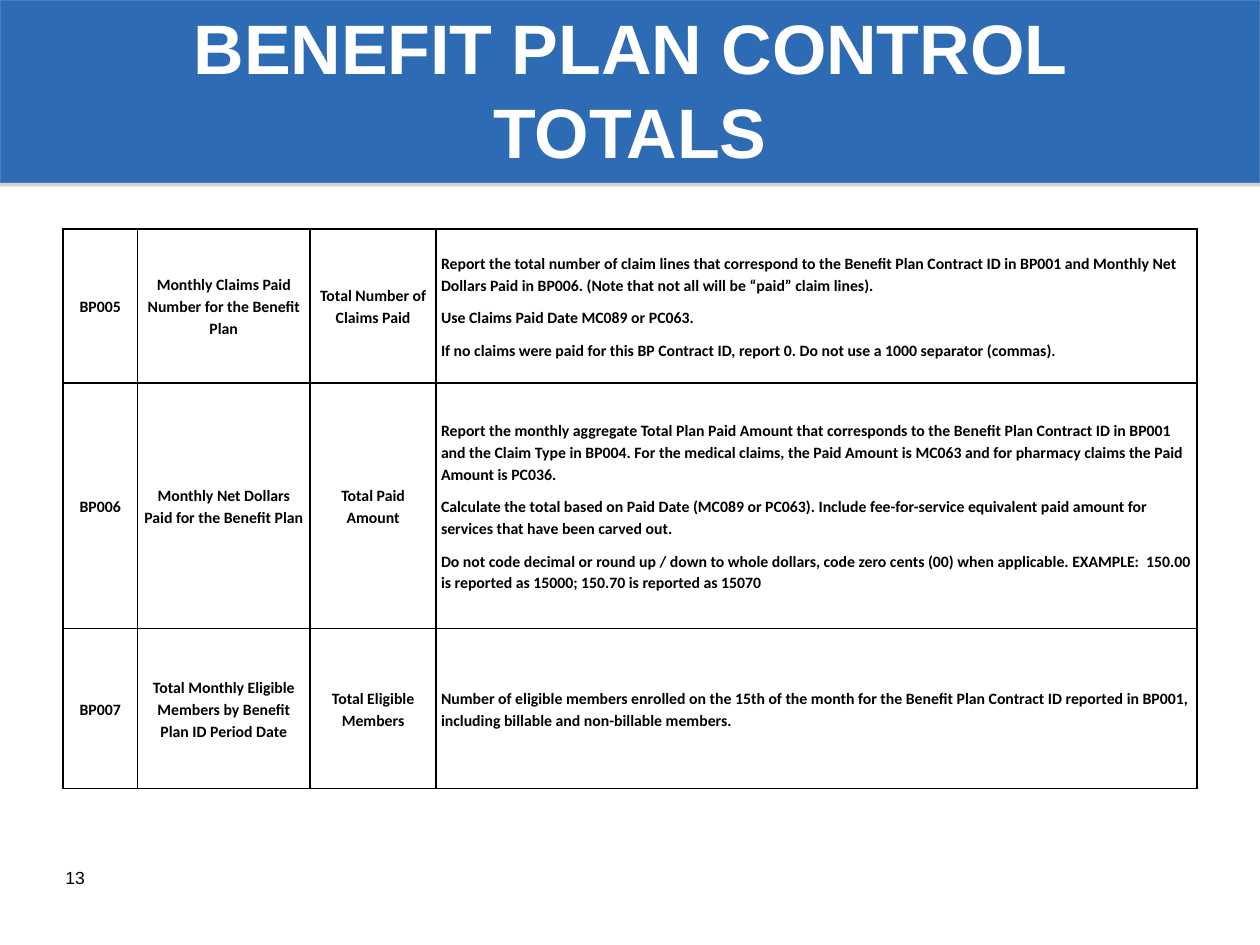
from lxml import etree
from pptx import Presentation
from pptx.dml.color import RGBColor
from pptx.enum.shapes import MSO_SHAPE
from pptx.enum.text import MSO_ANCHOR, MSO_AUTO_SIZE, PP_ALIGN
from pptx.oxml.ns import qn
from pptx.util import Cm, Pt

RECTANGLE = MSO_SHAPE.RECTANGLE
MIDDLE = MSO_ANCHOR.MIDDLE
NO_AUTOFIT = MSO_AUTO_SIZE.NONE
LEFT, CENTER = PP_ALIGN.LEFT, PP_ALIGN.CENTER
TITLE_ONLY = 5

COLORS = {"band": "2D6BB5", "band_line": "4A7EBB", "shadow": "808080",
          "white": "FFFFFF", "black": "000000"}

FONTS = {
    "title": {"name": "Arial", "size": Pt(40), "bold": True, "color": "white"},
    "number": {"name": "Arial", "size": Pt(10), "bold": False, "color": "black"},
    "cell": {"name": "Calibri", "size": Pt(9), "bold": True, "color": "black"},
}
CELL_FORMAT = {"margin_left": Cm(0.1), "margin_right": Cm(0.1),
               "margin_top": 0, "margin_bottom": 0, "vertical_anchor": MIDDLE}
CELL_SPACING = {"line_spacing": 1.15, "space_after": Pt(6)}

COLUMN_WIDTHS = [1.5, 3.48, 2.54, 15.34]
ROW_HEIGHTS = [3.1, 4.95, 3.23]
ROWS = [
    ["BP005", "Monthly Claims Paid Number for the Benefit Plan",
     "Total Number of Claims Paid",
     "Report the total number of claim lines that correspond to the Benefit Plan "
     "Contract ID in BP001 and Monthly Net Dollars Paid in BP006. (Note that not "
     "all will be “paid” claim lines).\n"
     "Use Claims Paid Date MC089 or PC063.\n"
     "If no claims were paid for this BP Contract ID, report 0. Do not use a 1000 "
     "separator (commas)."],
    ["BP006", "Monthly Net Dollars Paid for the Benefit Plan",
     "Total Paid Amount",
     "Report the monthly aggregate Total Plan Paid Amount that corresponds to the "
     "Benefit Plan Contract ID in BP001 and the Claim Type in BP004. For the medical "
     "claims, the Paid Amount is MC063 and for pharmacy claims the Paid Amount is "
     "PC036.\n"
     "Calculate the total based on Paid Date (MC089 or PC063). Include "
     "fee-for-service equivalent paid amount for services that have been carved out.\n"
     "Do not code decimal or round up / down to whole dollars, code zero cents (00) "
     "when applicable. EXAMPLE:  150.00 is reported as 15000; 150.70 is reported as "
     "15070"],
    ["BP007", "Total Monthly Eligible Members by Benefit Plan ID Period Date",
     "Total Eligible Members",
     "Number of eligible members enrolled on the 15th of the month for the Benefit "
     "Plan Contract ID reported in BP001, including billable and non-billable "
     "members."],
]


def rgb(color):
    return RGBColor.from_string(COLORS[color])


def apply_format(target, values):
    for name, value in values.items():
        setattr(target, name, value)


def write_text(text_frame, text, font, alignment=LEFT, spacing=None):
    text_frame.text = text
    for paragraph in text_frame.paragraphs:
        apply_format(paragraph, {"alignment": alignment, **(spacing or {})})
        for run in paragraph.runs:
            values = dict(FONTS[font])
            run.font.color.rgb = rgb(values.pop("color"))
            apply_format(run.font, values)


def add_color(parent, color):
    return etree.SubElement(parent, qn("a:srgbClr"), val=COLORS[color])


def add_shadow(shape):
    shape.shadow.inherit = False
    effects = shape.element.spPr.find(qn("a:effectLst"))
    shadow = etree.SubElement(effects, qn("a:outerShdw"), blurRad="0",
                              dist=str(Pt(1.8)), dir="5400000", rotWithShape="0")
    etree.SubElement(add_color(shadow, "shadow"), qn("a:alpha"), val="35000")


def add_borders(cell):
    properties = cell._tc.get_or_add_tcPr()
    for side in ("lnL", "lnR", "lnT", "lnB"):
        line = etree.SubElement(properties, qn(f"a:{side}"), w=str(Pt(1)))
        add_color(etree.SubElement(line, qn("a:solidFill")), "black")


def build_header(slide, left, top, width, height):
    band = slide.shapes.add_shape(RECTANGLE, left, top, width, height)
    band.fill.solid()
    band.fill.fore_color.rgb = rgb("band")
    band.line.color.rgb = rgb("band_line")
    band.line.width = Pt(0.75)
    add_shadow(band)

    title = slide.shapes.title
    title.element.addprevious(band.element)
    apply_format(title, {"left": left + Cm(1.27), "top": top + Cm(0.2),
                         "width": width - Cm(2.54), "height": Cm(3.18)})
    apply_format(title.text_frame, {"vertical_anchor": MIDDLE, "word_wrap": True,
                                    "auto_size": NO_AUTOFIT})
    write_text(title.text_frame, "BENEFIT PLAN CONTROL TOTALS", "title", CENTER)


def build_table(slide, left, top, width, height):
    table = slide.shapes.add_table(len(ROWS), len(COLUMN_WIDTHS),
                                   left, top, width, height).table
    apply_format(table, {"first_row": False, "horz_banding": False})
    for column, column_width in zip(table.columns, COLUMN_WIDTHS):
        column.width = Cm(column_width)
    for row, row_height, texts in zip(table.rows, ROW_HEIGHTS, ROWS):
        row.height = Cm(row_height)
        for index, (cell, text) in enumerate(zip(row.cells, texts)):
            add_borders(cell)
            cell.fill.background()
            apply_format(cell, CELL_FORMAT)
            is_description = index == len(texts) - 1
            write_text(cell.text_frame, text, "cell",
                       LEFT if is_description else CENTER, CELL_SPACING)


def build_page_number(slide, left, top, width, height):
    box = slide.shapes.add_textbox(left, top, width, height)
    box.text_frame.word_wrap = True
    write_text(box.text_frame, "13", "number")


def main():
    presentation = Presentation()
    presentation.slide_width = Cm(25.4)
    presentation.slide_height = Cm(19.05)
    slide = presentation.slides.add_slide(presentation.slide_layouts[TITLE_ONLY])
    build_header(slide, 0, 0, presentation.slide_width, Cm(3.68))
    build_page_number(slide, Cm(1.07), Cm(17.35), Cm(5.92), Cm(1.02))
    build_table(slide, Cm(1.27), Cm(4.62), Cm(sum(COLUMN_WIDTHS)),
                Cm(sum(ROW_HEIGHTS)))
    presentation.save("out.pptx")


if __name__ == "__main__":
    main()
